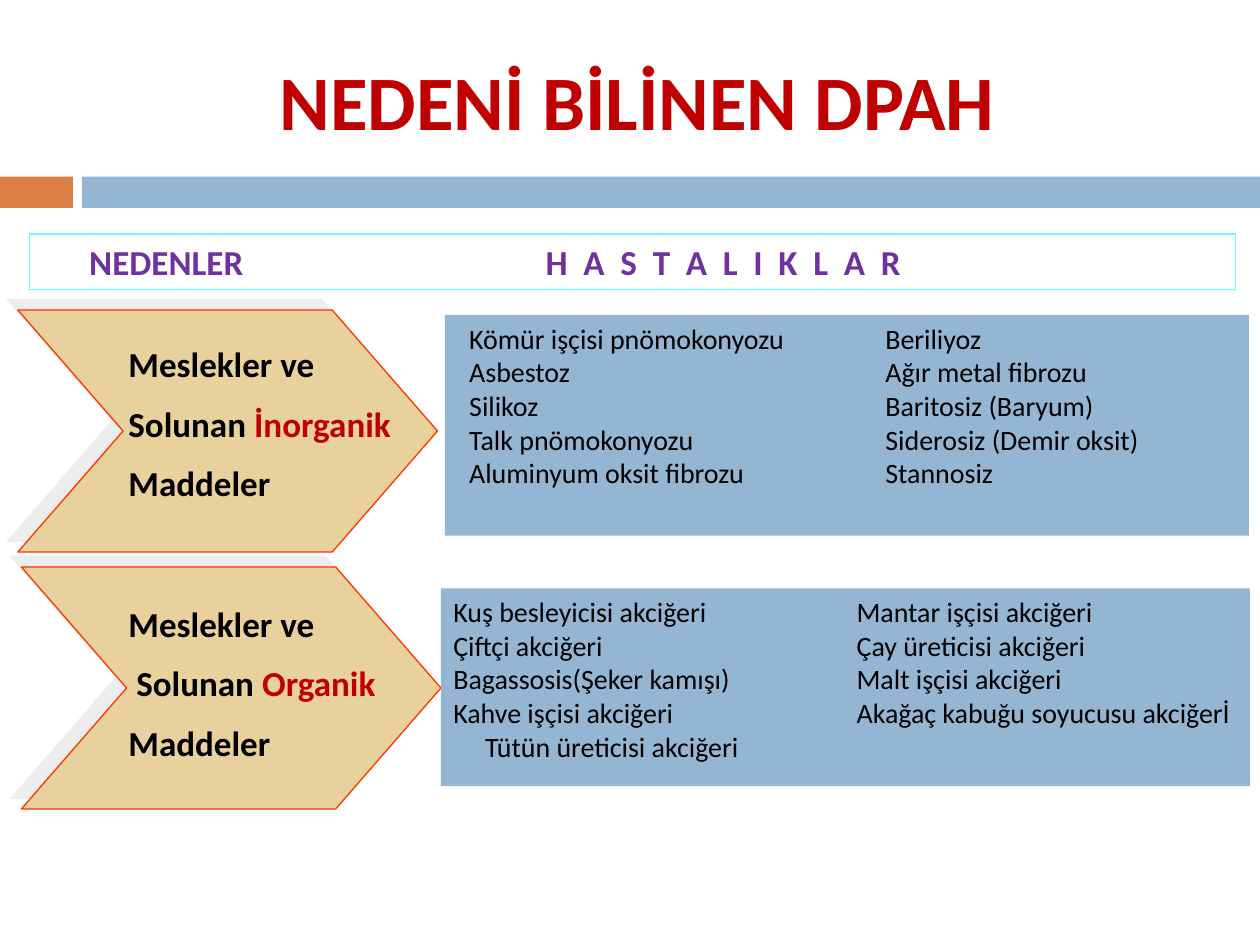
from lxml import etree
from pptx import Presentation
from pptx.dml.color import RGBColor
from pptx.enum.shapes import MSO_SHAPE
from pptx.enum.text import MSO_ANCHOR, MSO_AUTO_SIZE, PP_ALIGN
from pptx.oxml.ns import qn
from pptx.util import Cm, Pt

RECTANGLE, CHEVRON = MSO_SHAPE.RECTANGLE, MSO_SHAPE.CHEVRON
TOP, MIDDLE = MSO_ANCHOR.TOP, MSO_ANCHOR.MIDDLE
LEFT, CENTER = PP_ALIGN.LEFT, PP_ALIGN.CENTER
NO_AUTOFIT = MSO_AUTO_SIZE.NONE

FONT = "Calibri"
BLACK, RED, PURPLE = "000000", "C00000", "7030A0"
BLUE, ORANGE, SAND = "94B6D2", "DD8047", "E8D19D"
CHEVRON_LINE, HEADER_LINE, SHADOW = "FF3300", "66FFFF", "DDDDDD"


def color(hex_string):
    return RGBColor.from_string(hex_string)


def place(shape, box):
    shape.left, shape.top, shape.width, shape.height = (Cm(value) for value in box)


def add_block(slide, kind, box, fill=None, line=None):
    shape = slide.shapes.add_shape(kind, *(Cm(value) for value in box))
    shape.shadow.inherit = False
    if fill:
        shape.fill.solid()
        shape.fill.fore_color.rgb = color(fill)
    else:
        shape.fill.background()
    if line:
        shape.line.color.rgb = color(line)
        shape.line.width = Pt(0.75)
    else:
        shape.line.fill.background()
    return shape


def write(shape, lines, size=16, bold=False, align=LEFT, anchor=TOP,
          inset=0.25, right_inset=0.25, before=0, tab=None):
    """Each line is a list of (text, colour) runs; tab is a stop in cm."""
    frame = shape.text_frame
    frame.word_wrap = True
    frame.auto_size = NO_AUTOFIT
    frame.vertical_anchor = anchor
    frame.margin_left, frame.margin_right = Cm(inset), Cm(right_inset)
    frame.margin_top = frame.margin_bottom = Cm(0.13)
    for index, runs in enumerate(lines):
        paragraph = frame.add_paragraph() if index else frame.paragraphs[0]
        paragraph.alignment = align
        paragraph.space_before = Pt(before)
        if tab:
            tab_list = etree.SubElement(paragraph._p.get_or_add_pPr(), qn("a:tabLst"))
            etree.SubElement(tab_list, qn("a:tab"), pos=str(Cm(tab)), algn="l")
        for text, text_color in runs:
            run = paragraph.add_run()
            run.text = text
            run.font.name = FONT
            run.font.size = Pt(size)
            run.font.bold = bold
            run.font.color.rgb = color(text_color)
    return frame


def add_title(slide, box):
    title = slide.shapes.title
    place(title, box)
    write(title, [[("NEDENİ BİLİNEN DPAH ", RED)]], size=44, bold=True,
          align=CENTER, anchor=MIDDLE)


def add_bars(slide, box):
    left, top, width, height = box
    accent_width, gap = 1.47, 0.18
    offset = accent_width + gap
    add_block(slide, RECTANGLE, (left, top, accent_width, height), ORANGE)
    add_block(slide, RECTANGLE, (left + offset, top, width - offset, height), BLUE)


def add_header(slide, box):
    header = add_block(slide, RECTANGLE, box, line=HEADER_LINE)
    frame = write(header, [[("NEDENLER\t", PURPLE), ("H A S T A L I K L A R", PURPLE)]],
                  size=20, bold=True, anchor=MIDDLE, inset=1.2, tab=9.2)
    # Wide letter spacing for the second heading
    frame.paragraphs[0].runs[1].font._element.set("spc", "225")


def add_cause(slide, box, label_top, lines):
    left, top, width, height = box
    chevron = add_block(slide, CHEVRON, box, SAND, CHEVRON_LINE)
    chevron.adjustments[0] = 0.435
    # Soft grey shadow towards the upper left
    effects = chevron._element.spPr.find(qn("a:effectLst"))
    shadow = etree.SubElement(effects, qn("a:outerShdw"), dist=str(Pt(8.5)),
                              dir=str(225 * 60000), algn="ctr", rotWithShape="0")
    shade = etree.SubElement(shadow, qn("a:srgbClr"), val=SHADOW)
    etree.SubElement(shade, qn("a:alpha"), val="50000")
    # Label over the chevron
    label_box = (2.34, top + label_top, 6.78, 3.63)
    label = slide.shapes.add_textbox(*(Cm(value) for value in label_box))
    write(label, lines, size=20, bold=True, before=10)


def add_diseases(slide, box, rows, inset, tab):
    panel = add_block(slide, RECTANGLE, box, BLUE)
    lines = [[("\t".join(row), BLACK)] for row in rows]
    return write(panel, lines, inset=inset, right_inset=0, tab=tab)


def main():
    presentation = Presentation()
    presentation.slide_width, presentation.slide_height = Cm(25.4), Cm(19.05)
    slide = presentation.slides.add_slide(presentation.slide_layouts[5])

    add_bars(slide, (0, 3.56, 25.4, 0.63))
    add_title(slide, (1.7, 0.64, 22.66, 2.74))
    add_header(slide, (0.6, 4.72, 24.31, 1.12))

    # Inorganic substances
    add_cause(slide, (0.36, 6.25, 8.46, 4.88), 0.53, [
        [("Meslekler ve", BLACK)],
        [("Solunan ", BLACK), ("İnorganik", RED)],
        [("Maddeler", BLACK)],
    ])
    add_diseases(slide, (8.97, 6.35, 16.21, 4.45), [
        ("Kömür işçisi pnömokonyozu", "Beriliyoz"),
        ("Asbestoz", "Ağır metal fibrozu"),
        ("Silikoz", "Baritosiz (Baryum)"),
        ("Talk pnömokonyozu", "Siderosiz (Demir oksit)"),
        ("Aluminyum oksit fibrozu", "Stannosiz"),
    ], inset=0.49, tab=8.39)

    # Organic substances
    add_cause(slide, (0.43, 11.43, 8.46, 4.88), 0.58, [
        [("Meslekler ve", BLACK)],
        [(" Solunan ", BLACK), ("Organik", RED)],
        [("Maddeler", BLACK)],
    ])
    frame = add_diseases(slide, (8.89, 11.86, 16.31, 3.99), [
        ("Kuş besleyicisi akciğeri", "Mantar işçisi akciğeri"),
        ("Çiftçi akciğeri", "Çay üreticisi akciğeri"),
        ("Bagassosis(Şeker kamışı)", "Malt işçisi akciğeri"),
        ("Kahve işçisi akciğeri", "Akağaç kabuğu soyucusu akciğerİ"),
        ("Tütün üreticisi akciğeri",),
    ], inset=0.25, tab=8.13)
    frame.paragraphs[-1]._p.get_or_add_pPr().set("marL", str(Cm(0.64)))

    presentation.save("out.pptx")


if __name__ == "__main__":
    main()
